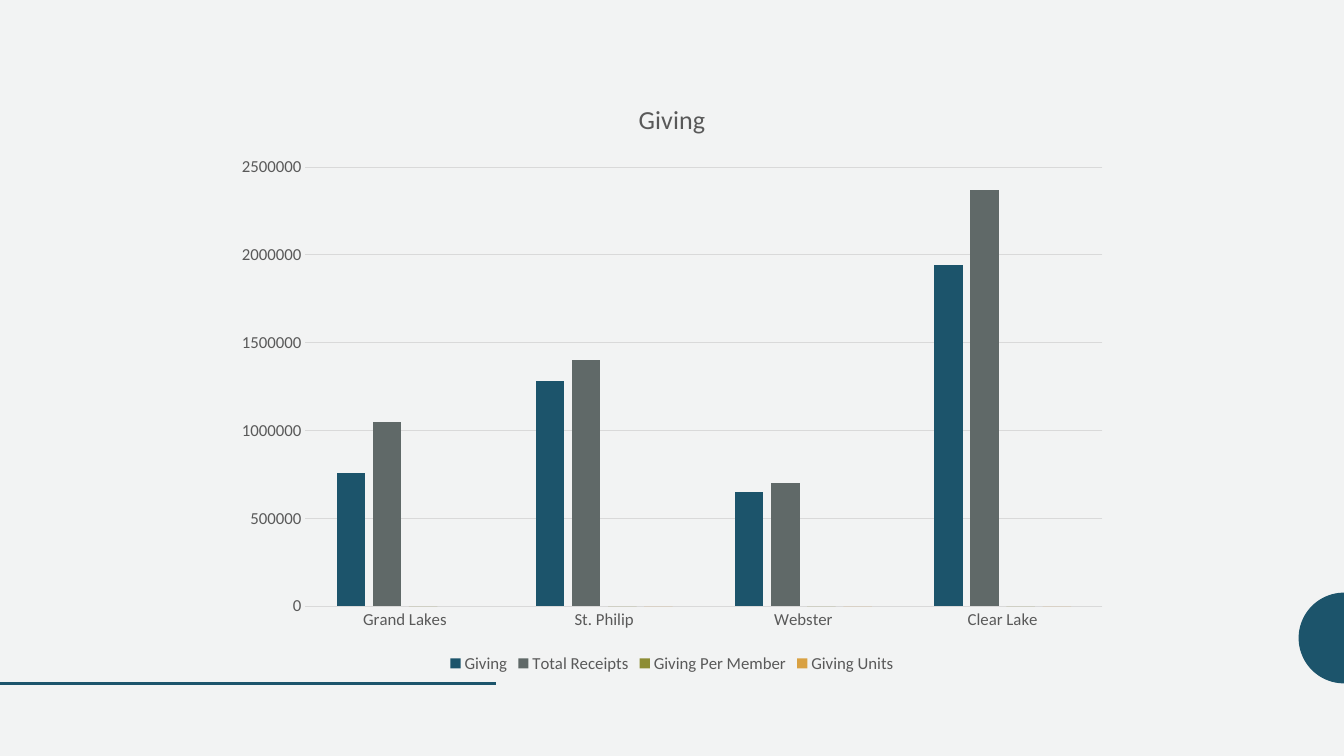
import math

from lxml import etree
from pptx import Presentation
from pptx.chart.data import CategoryChartData
from pptx.dml.color import RGBColor
from pptx.enum.chart import XL_CHART_TYPE, XL_LEGEND_POSITION, XL_TICK_MARK
from pptx.enum.shapes import MSO_CONNECTOR
from pptx.oxml.ns import qn
from pptx.util import Inches, Pt

COLUMNS = XL_CHART_TYPE.COLUMN_CLUSTERED
BOTTOM = XL_LEGEND_POSITION.BOTTOM
NO_TICK = XL_TICK_MARK.NONE
STRAIGHT = MSO_CONNECTOR.STRAIGHT

COLORS = {
    "background": "F2F3F3",
    "teal": "1C546B",
    "gray": "606968",
    "olive": "8D8D35",
    "amber": "D9A142",
    "text": "595959",
    "grid": "D9D9D9",
}
SERIES = [
    ("Giving", [760000, 1280000, 650000, 1940000], "teal"),
    ("Total Receipts", [1050000, 1400000, 700000, 2370000], "gray"),
    ("Giving Per Member", [0, 0, 0, 0], "olive"),
    ("Giving Units", [None, 0, 0, 0], "amber"),
]


def color(name):
    return RGBColor.from_string(COLORS[name])


def format_font(font, size):
    values = {"name": "Calibri", "size": Pt(size), "bold": False}
    for attribute, value in values.items():
        setattr(font, attribute, value)
    font.color.rgb = color("text")


presentation = Presentation()
presentation.slide_width = Inches(13.33)
presentation.slide_height = Inches(7.5)
slide = presentation.slides.add_slide(presentation.slide_layouts[6])
slide.background.fill.solid()
slide.background.fill.fore_color.rgb = color("background")

center_x, center_y, radius, steps = 13.33, 6.33, 0.45, 48
arc = []
for step in range(steps + 1):
    angle = math.pi * (0.5 + step / steps)
    x = center_x + radius * math.cos(angle)
    y = center_y + radius * math.sin(angle)
    arc.append((Inches(x), Inches(y)))
builder = slide.shapes.build_freeform(*arc[0])
builder.add_line_segments(arc[1:], close=True)
half_circle = builder.convert_to_shape()
half_circle.shadow.inherit = False
half_circle.fill.solid()
half_circle.fill.fore_color.rgb = color("teal")
half_circle.line.fill.background()

footer_line = slide.shapes.add_connector(
    STRAIGHT, 0, Inches(6.78), Inches(4.92), Inches(6.78)
)
footer_line.line.color.rgb = color("teal")
footer_line.line.width = Pt(2)
etree.SubElement(footer_line._element.spPr, qn("a:effectLst"))

chart_data = CategoryChartData()
chart_data.categories = ["Grand Lakes", "St. Philip", "Webster", "Clear Lake"]
for name, values, _ in SERIES:
    chart_data.add_series(name, values)
chart = slide.shapes.add_chart(
    COLUMNS, Inches(2.22), Inches(0.79), Inches(8.89), Inches(5.93), chart_data
).chart
format_font(chart.font, 12)

chart.has_title = True
title_frame = chart.chart_title.text_frame
title_frame.text = "Giving"
format_font(title_frame.paragraphs[0].runs[0].font, 18.6)
chart.chart_title.include_in_layout = False

chart.has_legend = True
chart.legend.position = BOTTOM
chart.legend.include_in_layout = False
format_font(chart.legend.font, 12)

plot = chart.plots[0]
plot.gap_width = 219
plot.overlap = -27
plot.vary_by_categories = False
for series, (_, _, fill_name) in zip(plot.series, SERIES):
    series.invert_if_negative = False
    series.format.fill.solid()
    series.format.fill.fore_color.rgb = color(fill_name)

for axis in (chart.category_axis, chart.value_axis):
    axis.major_tick_mark = NO_TICK
    axis.minor_tick_mark = NO_TICK
    format_font(axis.tick_labels.font, 12)

chart.value_axis.has_major_gridlines = True
chart.value_axis.minimum_scale = 0
chart.value_axis.maximum_scale = 2500000
chart.value_axis.major_unit = 500000
chart.value_axis.format.line.fill.background()
for line in (
    chart.category_axis.format.line,
    chart.value_axis.major_gridlines.format.line,
):
    line.color.rgb = color("grid")
    line.width = Pt(0.75)

presentation.save("out.pptx")
